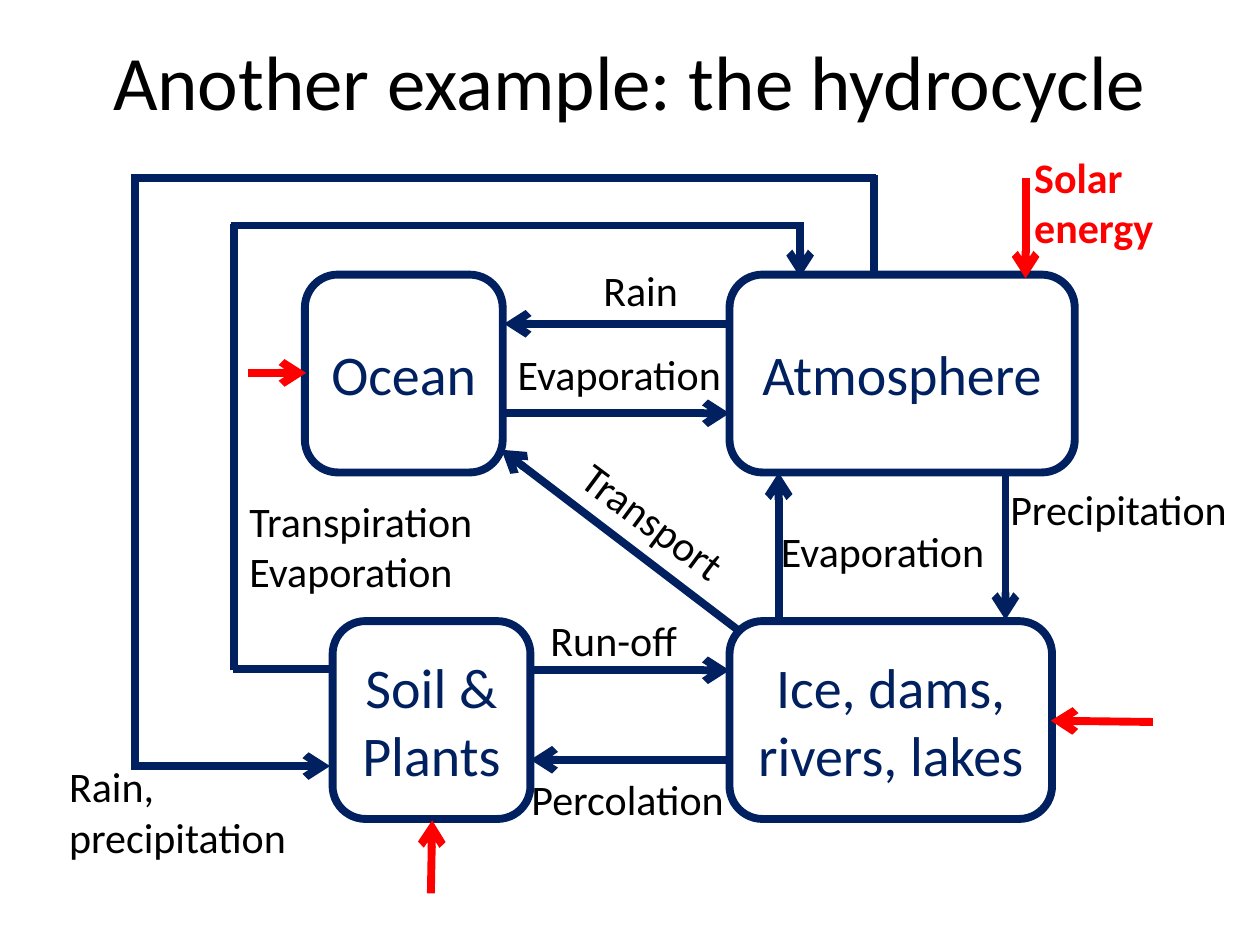
from lxml import etree
from pptx import Presentation
from pptx.dml.color import RGBColor
from pptx.enum.shapes import MSO_CONNECTOR, MSO_SHAPE
from pptx.enum.text import MSO_ANCHOR, MSO_AUTO_SIZE, PP_ALIGN
from pptx.oxml.ns import qn
from pptx.util import Emu, Pt

SCALE = 9144
ROUND = MSO_SHAPE.ROUNDED_RECTANGLE
LINE = MSO_CONNECTOR.STRAIGHT
MID, TOP = MSO_ANCHOR.MIDDLE, MSO_ANCHOR.TOP
GROW, FIXED = MSO_AUTO_SIZE.SHAPE_TO_FIT_TEXT, MSO_AUTO_SIZE.NONE
CENTER, LEFT = PP_ALIGN.CENTER, PP_ALIGN.LEFT
NAVY, RED, BLACK = "002060", "FF0000", "000000"


def px(*vals):
    """Turn px lengths into EMU."""
    return [Emu(v * SCALE) for v in vals]


def rgb(code):
    """Turn a hex string into a colour."""
    return RGBColor.from_string(code)


def apply(target, style):
    """Set each attribute named in the style."""
    for name, val in style.items():
        setattr(target, name, val)


class Board:
    """Holds the style and the slide being drawn."""

    face = "Calibri"
    weight = Pt(4.5)

    def __init__(self, slide):
        """Keep the current slide."""
        self.slide = slide

    def letter(self, shape, text, size, color, align, frame, bold=False):
        """Fill a shape with styled text."""
        body = shape.text_frame
        body.text = text
        apply(body, frame)
        font = {"name": self.face, "size": Pt(size), "bold": bold}
        for para in body.paragraphs:
            para.alignment = align
            for part in (para.font, *(run.font for run in para.runs)):
                apply(part, font)
                part.color.rgb = rgb(color)

    def stroke(self, line, color):
        """Give a line its colour and weight."""
        line.color.rgb = rgb(color)
        line.width = self.weight

    def title(self, text, *area):
        """Add the centred heading."""
        shape = self.slide.shapes.add_textbox(*px(*area))
        frame = {"word_wrap": True, "auto_size": FIXED, "vertical_anchor": MID}
        self.letter(shape, text, 44, BLACK, CENTER, frame)

    def box(self, text, *area):
        """Add a rounded reservoir box."""
        shape = self.slide.shapes.add_shape(ROUND, *px(*area))
        shape.shadow.inherit = False
        shape.fill.background()
        self.stroke(shape.line, NAVY)
        frame = {"word_wrap": True, "vertical_anchor": MID}
        self.letter(shape, text, 32, NAVY, CENTER, frame)

    def label(self, text, *area, color=BLACK, bold=False, turn=0):
        """Add a label, turned if asked."""
        shape = self.slide.shapes.add_textbox(*px(*area))
        shape.rotation = turn
        frame = {"word_wrap": False, "auto_size": GROW, "vertical_anchor": TOP}
        self.letter(shape, text, 24, color, LEFT, frame, bold)

    def link(self, *ends, color=NAVY, tip=True):
        """Add a straight line, with an arrowhead at its end if asked."""
        line = self.slide.shapes.add_connector(LINE, *px(*ends))
        self.stroke(line.line, color)
        props = line._element.spPr
        if tip:
            etree.SubElement(props.find(qn("a:ln")), qn("a:tailEnd"), type="arrow")
        etree.SubElement(props, qn("a:effectLst"))


def main():
    """Build the hydrocycle slide."""
    deck = Presentation()
    apply(deck, dict(zip(("slide_width", "slide_height"), px(1000, 750))))
    board = Board(deck.slides.add_slide(deck.slide_layouts[6]))
    board.title("Another example: the hydrocycle", 50, 1, 900, 125)

    side, upper, lower = 157, 218, 493
    for text, left, top, width in (
        ("Ocean", 242, upper, side),
        ("Soil &\nPlants", 264, lower, side),
        ("Atmosphere", 579, upper, 274),
        ("Ice, dams, rivers, lakes", 579, lower, 256),
    ):
        board.box(text, left, top, width, side)

    for ends in (
        (421, 532, 579, 532),
        (587, 501, 398, 357),
        (579, 603, 421, 603),
        (798, 374, 798, 492),
        (579, 257, 400, 257),
        (399, 328, 579, 328),
        (618, 493, 618, 375),
        (635, 178, 635, 220),
        (104, 608, 262, 608),
    ):
        board.link(*ends)

    for ends in (
        (186, 532, 186, 178),
        (185, 531, 264, 531),
        (183, 179, 638, 179),
        (694, 220, 694, 139),
        (104, 141, 695, 141),
        (107, 609, 107, 138),
    ):
        board.link(*ends, tip=False)

    for ends in (
        (814, 141, 814, 221),
        (915, 573, 834, 572),
        (342, 709, 343, 651),
        (197, 296, 243, 296),
    ):
        board.link(*ends, color=RED)

    for text, *area in (
        ("Precipitation", 792, 379, 194, 50),
        ("Rain", 469, 205, 80, 50),
        ("Rain,\nprecipitation", 45, 599, 194, 91),
        ("Run-off", 427, 483, 122, 50),
        ("Transpiration\nEvaporation", 188, 388, 199, 91),
        ("Percolation", 412, 609, 174, 50),
        ("Evaporation", 401, 272, 183, 50),
        ("Evaporation", 610, 412, 183, 50),
    ):
        board.label(text, *area)
    board.label("Transport", 444, 389, 151, 50, turn=36.6)
    board.label("Solar \venergy", 811, 115, 116, 91, color=RED, bold=True)

    deck.save("out.pptx")


if __name__ == "__main__":
    main()
